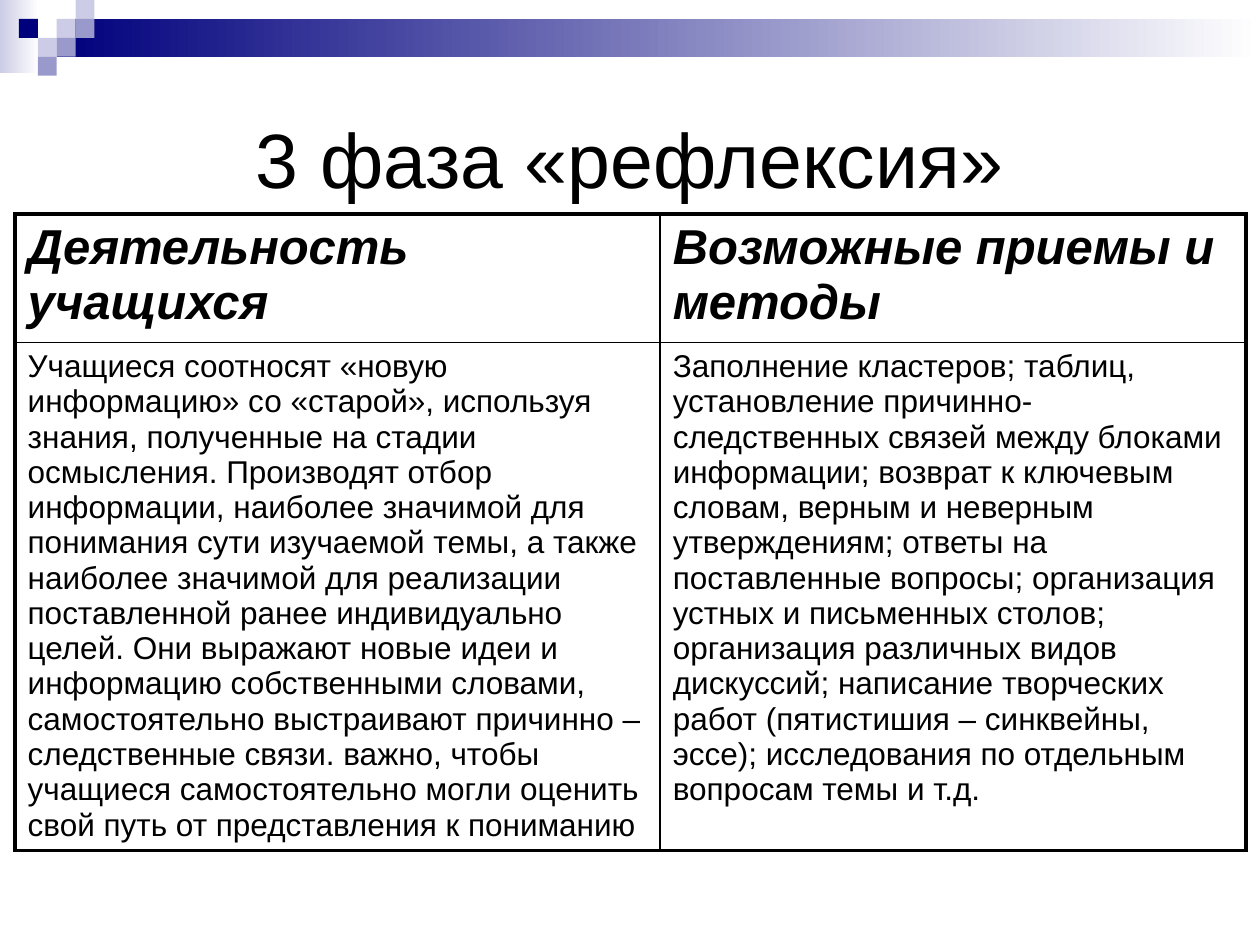
"""Build the slide on the reflection phase: a pixel banner, a title and a two-column table."""
from lxml.etree import SubElement
from pptx import Presentation
from pptx.dml.color import RGBColor
from pptx.enum.shapes import MSO_SHAPE as Shape
from pptx.enum.text import MSO_ANCHOR as Anchor, PP_ALIGN as Align
from pptx.oxml.ns import qn
from pptx.util import Inches, Pt

COLORS = {"ink": "000000", "paper": "FFFFFF", "navy": "00007D",
          "lilac": "9999CC", "pale": "CCCCE6"}
FONT = "Arial"
TITLE = "3 фаза «рефлексия»"
ROWS = [
    ("Деятельность учащихся", "Возможные приемы и методы"),
    ("Учащиеся соотносят «новую информацию» со «старой», используя знания, "
     "полученные на стадии осмысления. Производят отбор информации, наиболее "
     "значимой для понимания сути изучаемой темы, а также наиболее значимой для "
     "реализации поставленной ранее индивидуально целей. Они выражают новые идеи "
     "и информацию собственными словами, самостоятельно выстраивают причинно "
     "–следственные связи. важно, чтобы учащиеся самостоятельно могли оценить "
     "свой путь от представления к пониманию",
     "Заполнение кластеров; таблиц, установление причинно- следственных связей "
     "между блоками информации; возврат к ключевым словам, верным и неверным "
     "утверждениям; ответы на поставленные вопросы; организация устных и "
     "письменных столов; организация различных видов дискуссий; написание "
     "творческих работ (пятистишия – синквейны, эссе); исследования по отдельным "
     "вопросам темы и т.д."),
]
COLUMN_WIDTHS = (5.12, 4.65)
ROW_HEIGHTS = (1.02, 4.03)
TABLE_LEFT, TABLE_TOP = 0.12, 1.7
OUTER_LINE, INNER_LINE = 2.25, 1

PIXEL = 0.15
BANDS = [((0, 0, 0.31, 0.58), "pale"), ((3 * PIXEL, PIXEL, 9.55, 2 * PIXEL), "navy")]
PIXELS = [(3, 1, "pale"), (4, 0, "pale"), (4, 1, "lilac"), (2, 2, "pale"),
          (1, 1, "navy"), (3, 2, "lilac"), (2, 3, "lilac")]


def rgb(name):
    return RGBColor.from_string(COLORS[name])


def style(paragraph, size, emphasis=False):
    font = paragraph.font
    font.name, font.size = FONT, Pt(size)
    font.bold = font.italic = emphasis
    font.color.rgb = rgb("ink")


def add_block(slide, box, color, fades=False):
    block = slide.shapes.add_shape(Shape.RECTANGLE, *map(Inches, box))
    block.shadow.inherit = False
    block.line.fill.background()
    if fades:
        block.fill.gradient()
        block.fill.gradient_angle = 0
        for stop, name in zip(block.fill.gradient_stops, (color, "paper")):
            stop.color.rgb = rgb(name)
    else:
        block.fill.solid()
        block.fill.fore_color.rgb = rgb(color)


def set_borders(cell, widths):
    properties = cell._tc.get_or_add_tcPr()
    for position, (side, width) in enumerate(widths.items()):
        line = properties.makeelement(qn(f"a:ln{side}"), {"w": str(Pt(width))})
        properties.insert(position, line)
        solid = SubElement(line, qn("a:solidFill"))
        SubElement(solid, qn("a:srgbClr"), val=COLORS["ink"])


def add_activity_table(slide):
    last_row, last_column = len(ROWS) - 1, len(COLUMN_WIDTHS) - 1
    table = slide.shapes.add_table(
        len(ROWS), len(COLUMN_WIDTHS), Inches(TABLE_LEFT), Inches(TABLE_TOP),
        Inches(sum(COLUMN_WIDTHS)), Inches(sum(ROW_HEIGHTS))).table
    table.horz_banding = False
    for column, width in zip(table.columns, COLUMN_WIDTHS):
        column.width = Inches(width)
    for r, (texts, height) in enumerate(zip(ROWS, ROW_HEIGHTS)):
        table.rows[r].height = Inches(height)
        for c, text in enumerate(texts):
            cell = table.cell(r, c)
            cell.text = text
            cell.fill.background()
            style(cell.text_frame.paragraphs[0], 18 if r else 28, emphasis=r == 0)
            outer = {"L": c == 0, "R": c == last_column, "T": r == 0, "B": r == last_row}
            set_borders(cell, {side: OUTER_LINE if edge else INNER_LINE
                               for side, edge in outer.items()})


def main():
    deck = Presentation()
    deck.slide_width, deck.slide_height = Inches(10), Inches(7.5)
    slide = deck.slides.add_slide(deck.slide_layouts[5])
    for box, color in BANDS:
        add_block(slide, box, color, fades=True)
    for column, row, color in PIXELS:
        add_block(slide, (column * PIXEL, row * PIXEL, PIXEL, PIXEL), color)

    title = slide.shapes.title
    title.left, title.top, title.width, title.height = map(Inches, (0.5, 0.5, 9, 1.5))
    title.text = TITLE
    title.text_frame.vertical_anchor = Anchor.MIDDLE
    heading = title.text_frame.paragraphs[0]
    heading.alignment = Align.CENTER
    style(heading, 44)

    add_activity_table(slide)
    deck.save("out.pptx")


if __name__ == "__main__":
    main()
